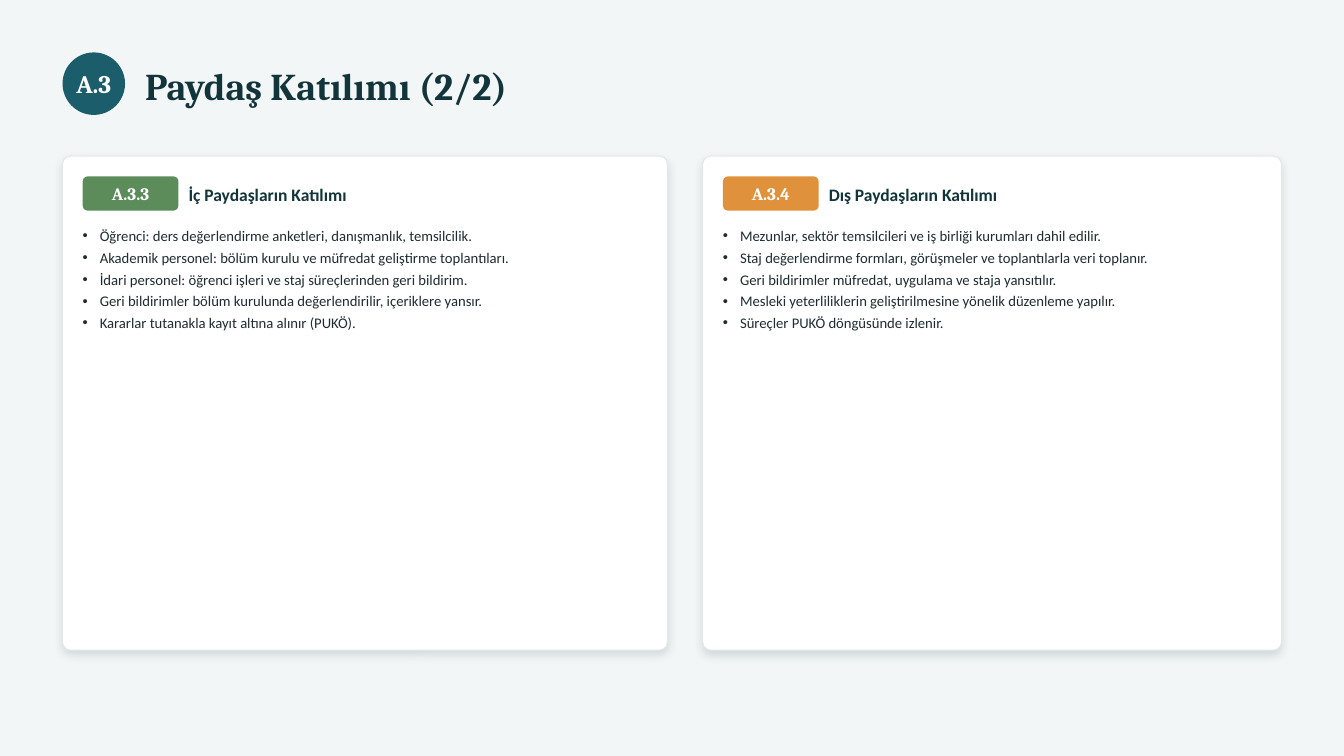
import pptx
import pptx.util
import pptx.dml.color
import pptx.enum.shapes
import pptx.enum.text
import pptx.oxml
import pptx.oxml.ns

# Content
CODE, TITLE = "A.3", "Paydaş Katılımı (2/2)"
CARDS = [
    ("A.3.3", "İç Paydaşların Katılımı", "5B8C5A", [
        "Öğrenci: ders değerlendirme anketleri, danışmanlık, temsilcilik.",
        "Akademik personel: bölüm kurulu ve müfredat geliştirme toplantıları.",
        "İdari personel: öğrenci işleri ve staj süreçlerinden geri bildirim.",
        "Geri bildirimler bölüm kurulunda değerlendirilir, içeriklere yansır.",
        "Kararlar tutanakla kayıt altına alınır (PUKÖ).",
    ]),
    ("A.3.4", "Dış Paydaşların Katılımı", "E0913B", [
        "Mezunlar, sektör temsilcileri ve iş birliği kurumları dahil edilir.",
        "Staj değerlendirme formları, görüşmeler ve toplantılarla veri toplanır.",
        "Geri bildirimler müfredat, uygulama ve staja yansıtılır.",
        "Mesleki yeterliliklerin geliştirilmesine yönelik düzenleme yapılır.",
        "Süreçler PUKÖ döngüsünde izlenir.",
    ]),
]

# Grid, in inches
WIDE, HIGH = 13.33, 7.5
EDGE, GAP, PAD = 0.62, 0.35, 0.2
TOP, TALL = 1.55, 4.9
LEFT = 6  # width of the first card; the second takes the rest
SPANS = [LEFT, WIDE - 2 * EDGE - GAP - LEFT]
TAG = 0.95
HEAD, SERIF, SANS = "12343B", "Cambria", "Calibri"
KIND = pptx.enum.shapes.MSO_SHAPE
ALIGN = pptx.enum.text.PP_ALIGN
ANCHOR = pptx.enum.text.MSO_ANCHOR
inch = pptx.util.Inches


def color(text):
    return pptx.dml.color.RGBColor.from_string(text)


def place(item, x, y, w, h):
    item.left, item.top, item.width, item.height = map(inch, (x, y, w, h))


def xml(body):
    return pptx.oxml.parse_xml(body.replace(" ", f" {pptx.oxml.ns.nsdecls('a')} ", 1))


def write(item, lines, size, ink, font=SANS, bold=False, align=ALIGN.LEFT,
          anchor=ANCHOR.MIDDLE, wrap=True, bullet=False):
    frame = item.text_frame
    frame.text = "\n".join(lines)
    frame.word_wrap = wrap
    frame.auto_size = pptx.enum.text.MSO_AUTO_SIZE.NONE
    frame.vertical_anchor = anchor
    frame.margin_left = frame.margin_right = frame.margin_top = frame.margin_bottom = 0
    for para in frame.paragraphs:
        para.alignment = align
        para.space_before = pptx.util.Pt(0)
        if bullet:
            para.space_after = pptx.util.Pt(3)
            props = para._p.get_or_add_pPr()
            props.set("marL", str(inch(0.17)))
            props.set("indent", str(-inch(0.17)))
            props.append(xml('<a:buChar char="•"/>'))
        face = para.runs[0].font
        face.name, face.size, face.bold = font, pptx.util.Pt(size), bold
        face.color.rgb = color(ink)


def shape(kind, x, y, w, h, fill, line=None, round=None):
    item = slide.shapes.add_shape(kind, *map(inch, (x, y, w, h)))
    item.shadow.inherit = False
    item.fill.solid()
    item.fill.fore_color.rgb = color(fill)
    if line:
        item.line.color.rgb = color(line)
        item.line.width = pptx.util.Pt(0.75)
    else:
        item.line.fill.background()
    if round:
        item.adjustments[0] = round
    return item


def shade(item):
    effects = item._element.spPr.find(pptx.oxml.ns.qn("a:effectLst"))
    effects.append(xml(
        f'<a:outerShdw blurRad="{pptx.util.Pt(7)}" dist="{pptx.util.Pt(3)}" dir="5400000" '
        'algn="t" rotWithShape="0"><a:srgbClr val="0C2A30"><a:alpha val="14000"/>'
        '</a:srgbClr></a:outerShdw>'))


deck = pptx.Presentation()
deck.slide_width, deck.slide_height = inch(WIDE), inch(HIGH)
slide = deck.slides.add_slide(deck.slide_layouts.get_by_name("Comparison"))
slide.background.fill.solid()
slide.background.fill.fore_color.rgb = color("F3F6F7")
holders = list(slide.placeholders)

# Title row
disc = shape(KIND.OVAL, EDGE, 0.52, 0.62, 0.62, "1C5D6B")
write(disc, [CODE], 18, "FFFFFF", SERIF, True, ALIGN.CENTER, wrap=False)
place(holders[0], 1.44, 0.5, WIDE - EDGE - 1.44, 0.7)
write(holders[0], [TITLE], 27, HEAD, SERIF, True)

# Cards with tag, heading and list
x = EDGE
for (code, name, fill, points), span, head, body in zip(
        CARDS, SPANS, holders[1::2], holders[2::2]):
    inner, room = x + PAD, span - 2 * PAD
    shade(shape(KIND.ROUNDED_RECTANGLE, x, TOP, span, TALL, "FFFFFF", "E2E9EA", 0.016))
    tag = shape(KIND.ROUNDED_RECTANGLE, inner, TOP + PAD, TAG, 0.34, fill, round=0.147)
    write(tag, [code], 12.5, "FFFFFF", SERIF, True, ALIGN.CENTER)
    shift = TAG + 0.1
    place(head, inner + shift, TOP + 0.18, room - shift, 0.4)
    write(head, [name], 12.5, HEAD, bold=True)
    place(body, inner, TOP + 0.7, room, 4)
    write(body, points, 10.5, "1F2C30", anchor=ANCHOR.TOP, bullet=True)
    x += span + GAP

# Text placeholders lie in front of the cards
for item in holders:
    slide.shapes._spTree.append(item._element)

deck.save("out.pptx")
